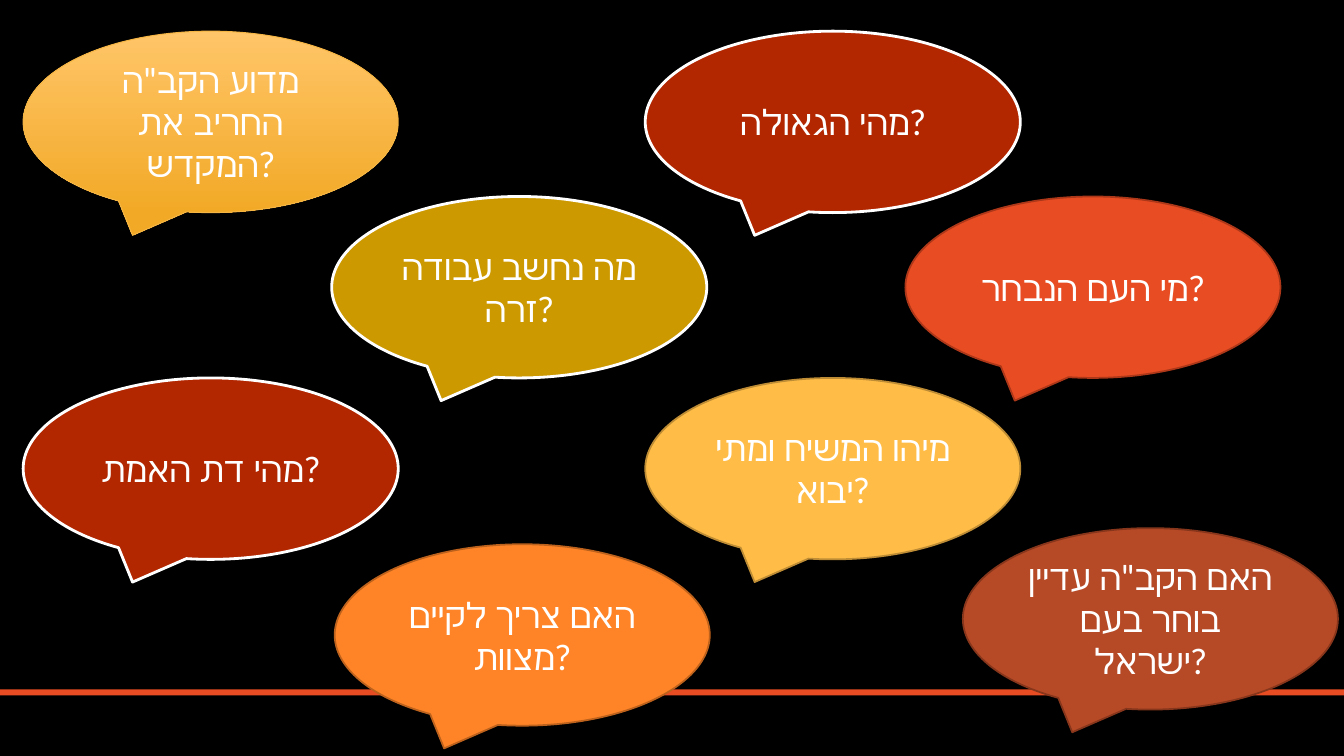
from lxml import etree
from pptx import Presentation
from pptx import util as u
from pptx.dml.color import RGBColor
from pptx.enum import shapes, text
from pptx.oxml.ns import qn

THEME = {
    "font": "Lato",
    "size": 25,
    "background": "000000",
    "text": "FFFFFF",
    "band": "E84C22",
    "orange red": ("E84C22", "AC3819", 1.25),
    "yellow": ("FFBD47", "BD8C35", 1.25),
    "olive": ("CC9900", "FFFFFF", 2),
    "dark red": ("B22600", "FFFFFF", 2),
    "brown": ("B64926", "87361C", 1.25),
    "orange": ("FF8427", "BD621D", 1.25),
    "gold": (("FFC568", "F2A926"), "F4B544", 0.75),
}

QUESTIONS = [
    ("מי העם הנבחר?", 8.98, 1.95, "orange red"),
    ("מיהו המשיח ומתי יבוא?", 6.4, 3.75, "yellow"),
    ("מה נחשב עבודה זרה?", 3.29, 1.95, "olive"),
    ("מהי דת האמת?", 0.23, 3.75, "dark red"),
    ('האם הקב"ה עדיין בוחר בעם ישראל?', 9.55, 5.24, "brown"),
    ("האם צריך לקיים מצוות?", 3.32, 5.4, "orange"),
    ('מדוע הקב"ה החריב את המקדש?', 0.23, 0.31, "gold"),
    ("מהי הגאולה?", 6.4, 0.31, "dark red"),
]

SLIDE_SIZE = (13.33, 7.5)
BUBBLE_SIZE = (3.72, 1.8)
BAND = (0, 6.84, 13.33, 0.06)


def paint(fill, colour):
    if isinstance(colour, tuple):
        fill.gradient()
        fill.gradient_angle = 270
        for stop, shade in zip(fill.gradient_stops, colour):
            stop.color.rgb = RGBColor.from_string(shade)
    else:
        fill.solid()
        fill.fore_color.rgb = RGBColor.from_string(colour)


def add_part(slide, preset, box, colour):
    part = slide.shapes.add_shape(preset, *map(u.Inches, box))
    part.shadow.inherit = False
    paint(part.fill, colour)
    return part


def add_bubble(slide, question, left, top, style):
    colour, outline, width = THEME[style]
    bubble = add_part(slide, shapes.MSO_SHAPE.OVAL_CALLOUT,
                      (left, top, *BUBBLE_SIZE), colour)
    paint(bubble.line.fill, outline)
    bubble.line.width = u.Pt(width)
    frame = bubble.text_frame
    frame.word_wrap = True
    frame.vertical_anchor = text.MSO_ANCHOR.MIDDLE
    paragraph = frame.paragraphs[0]
    paragraph.alignment = text.PP_ALIGN.CENTER
    run = paragraph.add_run()
    run.text = question
    run.font.size = u.Pt(THEME["size"])
    run.font.name = THEME["font"]
    paint(run.font.fill, THEME["text"])
    etree.SubElement(run.font._element, qn("a:cs"), typeface=THEME["font"])


def main():
    deck = Presentation()
    deck.slide_width, deck.slide_height = map(u.Inches, SLIDE_SIZE)
    slide = deck.slides.add_slide(deck.slide_layouts[6])
    paint(slide.background.fill, THEME["background"])
    band = add_part(slide, shapes.MSO_SHAPE.RECTANGLE, BAND, THEME["band"])
    band.line.fill.background()
    for question in QUESTIONS:
        add_bubble(slide, *question)
    deck.save("out.pptx")


if __name__ == "__main__":
    main()
